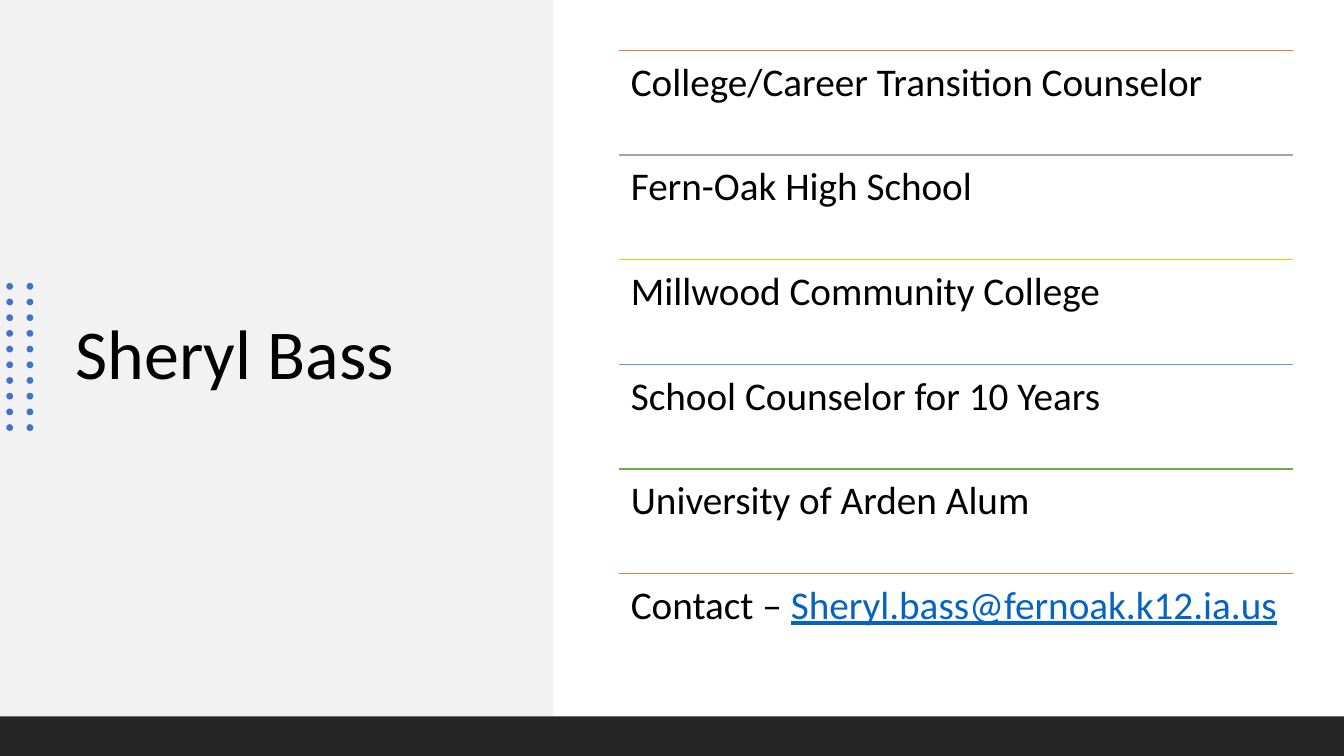
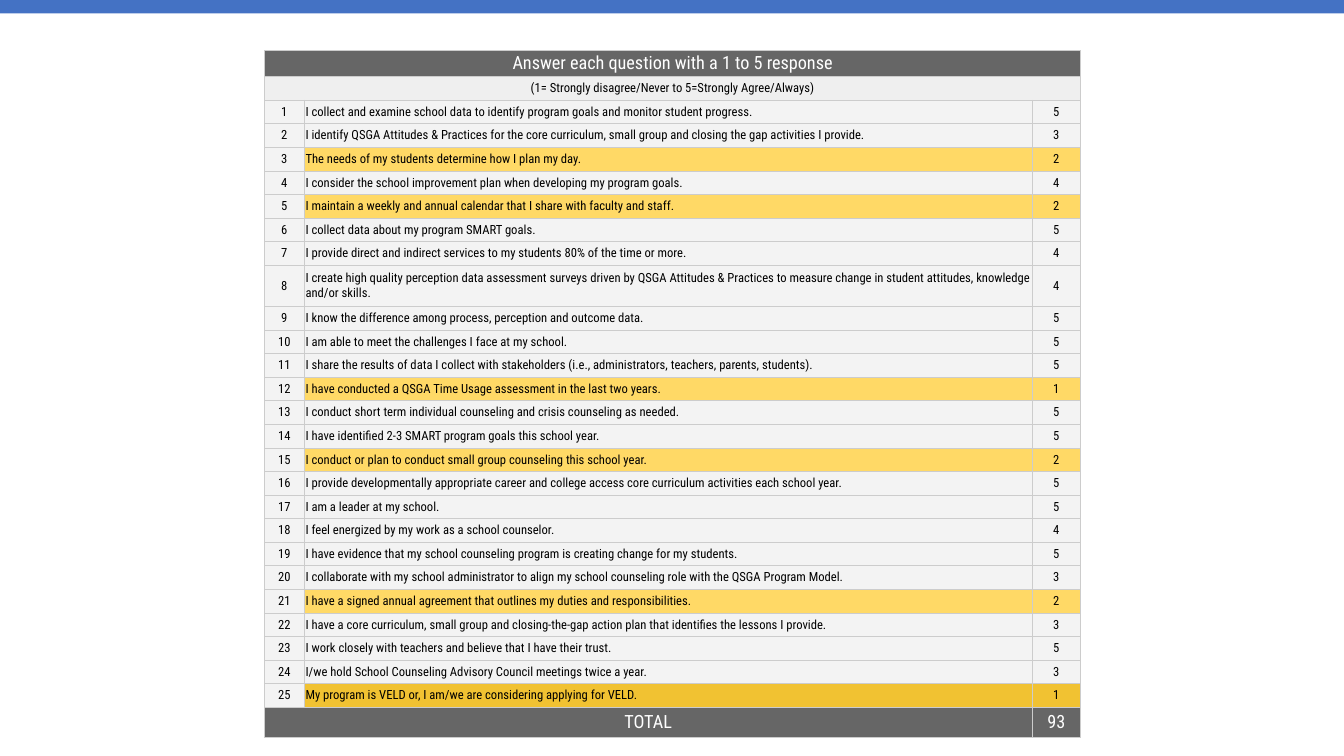
from lxml import etree
from pptx import Presentation
from pptx import util as u
from pptx.dml.color import RGBColor
from pptx.enum import shapes, text
from pptx.oxml import ns

BLACK, WHITE, BLUE = "000000", "FFFFFF", "4472C4"
PANEL, FOOTER, LINK = "F2F2F2", "262626", "0563C1"
DARK, PALE, LIGHT, YELLOW, GOLD = "666666", "EFEFEF", "F3F3F3", "FFD966", "F1C232"
BORDER = "CCCCCC"
BODY_FONT, TABLE_FONT = "Calibri", "Roboto Condensed"
SLIDE_WIDTH, SLIDE_HEIGHT = 33.87, 19.05


def add_block(container, kind, left, top, width, height, fill):
    shape = container.add_shape(kind, u.Cm(left), u.Cm(top), u.Cm(width), u.Cm(height))
    shape.shadow.inherit = False
    shape.fill.solid()
    shape.fill.fore_color.rgb = RGBColor.from_string(fill)
    shape.line.fill.background()
    return shape


def add_run(paragraph, words, font_name, size, color):
    run = paragraph.add_run()
    run.text = words
    run.font.name = font_name
    run.font.size = u.Pt(size)
    run.font.color.rgb = RGBColor.from_string(color)
    return run


presentation = Presentation()
presentation.slide_width = u.Cm(SLIDE_WIDTH)
presentation.slide_height = u.Cm(SLIDE_HEIGHT)
RECTANGLE = shapes.MSO_SHAPE.RECTANGLE

# Slide 1: introduction
slide = presentation.slides.add_slide(presentation.slide_layouts[5])
title = slide.shapes.title
panel = add_block(slide.shapes, RECTANGLE, 0, 0, 13.94, 18.05, PANEL)
title.element.addprevious(panel.element)

title.left, title.top, title.width, title.height = u.Cm(1.65), u.Cm(3.35), u.Cm(10.77), u.Cm(11.3)
title.text_frame.vertical_anchor = text.MSO_ANCHOR.MIDDLE
paragraph = title.text_frame.paragraphs[0]
paragraph.alignment = text.PP_ALIGN.LEFT
paragraph.line_spacing = 0.9
add_run(paragraph, "Sheryl Bass", BODY_FONT, 50, BLACK)

# Two columns of dots
dots = slide.shapes.add_group_shape()
for row in range(10):
    for left in (0.16, 0.67):
        add_block(dots.shapes, shapes.MSO_SHAPE.OVAL, left, 7.13 + row * 3.56 / 9, 0.17, 0.17, BLUE)

add_block(slide.shapes, RECTANGLE, 0, 18.05, SLIDE_WIDTH, 1, FOOTER)

# Facts, each under a coloured rule
facts = [
    ("ED7D31", "College/Career Transition Counselor", ""),
    ("A5A5A5", "Fern-Oak High School", ""),
    ("FFC000", "Millwood Community College", ""),
    ("5B9BD5", "School Counselor for 10 Years", ""),
    ("70AD47", "University of Arden Alum", ""),
    ("ED7D31", "Contact – ", "Sheryl.bass@fernoak.k12.ia.us"),
]
FACT_LEFT, FACT_TOP, FACT_WIDTH = 15.6, 1.27, 16.99
FACT_HEIGHT = 15.82 / len(facts)
for index, (color, words, address) in enumerate(facts):
    top = u.Cm(FACT_TOP + index * FACT_HEIGHT)
    rule = slide.shapes.add_connector(
        shapes.MSO_CONNECTOR.STRAIGHT, u.Cm(FACT_LEFT), top, u.Cm(FACT_LEFT + FACT_WIDTH), top)
    rule.line.color.rgb = RGBColor.from_string(color)
    rule.line.width = u.Pt(1)
    etree.SubElement(rule.element.spPr, ns.qn("a:effectLst"))

    box = slide.shapes.add_textbox(u.Cm(FACT_LEFT), top, u.Cm(FACT_WIDTH), u.Cm(FACT_HEIGHT))
    frame = box.text_frame
    frame.word_wrap = True
    frame.margin_left = frame.margin_right = frame.margin_top = frame.margin_bottom = u.Cm(0.3)
    paragraph = frame.paragraphs[0]
    paragraph.line_spacing = 0.9
    add_run(paragraph, words, BODY_FONT, 28, BLACK)
    if address:
        add_run(paragraph, address, BODY_FONT, 28, LINK).font.underline = True

# Slide 2: self-assessment
slide = presentation.slides.add_slide(presentation.slide_layouts[6])
add_block(slide.shapes, RECTANGLE, 0, 0, SLIDE_WIDTH, 0.34, BLUE)

answers = [
    ("I collect and examine school data to identify program goals and monitor student progress.", 5),
    ("I identify QSGA Attitudes & Practices for the core curriculum, small group and closing the gap "
     "activities I provide.", 3),
    ("The needs of my students determine how I plan my day.", 2),
    ("I consider the school improvement plan when developing my program goals.", 4),
    ("I maintain a weekly and annual calendar that I share with faculty and staff.", 2),
    ("I collect data about my program SMART goals.", 5),
    ("I provide direct and indirect services to my students 80% of the time or more.", 4),
    ("I create high quality perception data assessment surveys driven by QSGA Attitudes & Practices "
     "to measure change in student attitudes, knowledge and/or skills.", 4),
    ("I know the difference among process, perception and outcome data.", 5),
    ("I am able to meet the challenges I face at my school.", 5),
    ("I share the results of data I collect with stakeholders (i.e., administrators, teachers, "
     "parents, students).", 5),
    ("I have conducted a QSGA Time Usage assessment in the last two years.", 1),
    ("I conduct short term individual counseling and crisis counseling as needed.", 5),
    ("I have identified 2-3 SMART program goals this school year.", 5),
    ("I conduct or plan to conduct small group counseling this school year.", 2),
    ("I provide developmentally appropriate career and college access core curriculum activities "
     "each school year.", 5),
    ("I am a leader at my school.", 5),
    ("I feel energized by my work as a school counselor.", 4),
    ("I have evidence that my school counseling program is creating change for my students.", 5),
    ("I collaborate with my school administrator to align my school counseling role with the QSGA "
     "Program Model.", 3),
    ("I have a signed annual agreement that outlines my duties and responsibilities.", 2),
    ("I have a core curriculum, small group and closing-the-gap action plan that identifies the "
     "lessons I provide.", 3),
    ("I work closely with teachers and believe that I have their trust.", 5),
    ("I/we hold School Counseling Advisory Council meetings twice a year.", 3),
    ("My program is VELD or, I am/we are considering applying for VELD.", 1),
]

# Rows as (cell texts, cell fills, text size, text colour)
rows = [
    (("Answer each question with a 1 to 5 response", "", ""), [DARK] * 3, 13, WHITE),
    (("(1= Strongly disagree/Never to 5=Strongly Agree/Always)", "", ""), [PALE] * 3, 9, BLACK),
]
for number, (statement, score) in enumerate(answers, 1):
    fill = LIGHT
    if score <= 2:
        fill = GOLD if number == len(answers) else YELLOW
    rows.append(((str(number), statement, str(score)), [LIGHT, fill, fill], 9, BLACK))
total = sum(score for statement, score in answers)
rows.append((("TOTAL", "", str(total)), [DARK] * 3, 13, WHITE))

# Table grid
TABLE_HEIGHT = 17.32
special_heights = {0: 0.66, 9: 1.04, len(rows) - 1: 0.76}
plain_height = (TABLE_HEIGHT - sum(special_heights.values())) / (len(rows) - len(special_heights))
table = slide.shapes.add_table(
    len(rows), 3, u.Cm(6.66), u.Cm(1.27), u.Cm(20.57), u.Cm(TABLE_HEIGHT)).table
for column, width in zip(table.columns, (1.01, 18.34, 1.22)):
    column.width = u.Cm(width)
table.cell(0, 0).merge(table.cell(0, 2))
table.cell(1, 0).merge(table.cell(1, 2))
table.cell(len(rows) - 1, 0).merge(table.cell(len(rows) - 1, 1))

# Table cells
for row_index, (words, fills, size, color) in enumerate(rows):
    table.rows[row_index].height = u.Cm(special_heights.get(row_index, plain_height))
    for column_index in range(3):
        cell = table.cell(row_index, column_index)
        cell.margin_left = cell.margin_right = cell.margin_top = cell.margin_bottom = u.Cm(0.03)
        cell.vertical_anchor = text.MSO_ANCHOR.MIDDLE
        properties = cell._tc.get_or_add_tcPr()
        for side in ("lnL", "lnR", "lnT", "lnB"):
            line = etree.SubElement(properties, ns.qn("a:" + side), w=str(u.Pt(0.6)))
            line_fill = etree.SubElement(line, ns.qn("a:solidFill"))
            etree.SubElement(line_fill, ns.qn("a:srgbClr"), val=BORDER)
        cell.fill.solid()
        cell.fill.fore_color.rgb = RGBColor.from_string(fills[column_index])
        if words[column_index]:
            paragraph = cell.text_frame.paragraphs[0]
            is_statement = column_index == 1
            paragraph.alignment = text.PP_ALIGN.LEFT if is_statement else text.PP_ALIGN.CENTER
            add_run(paragraph, words[column_index], TABLE_FONT, size, color)

presentation.save("out.pptx")
